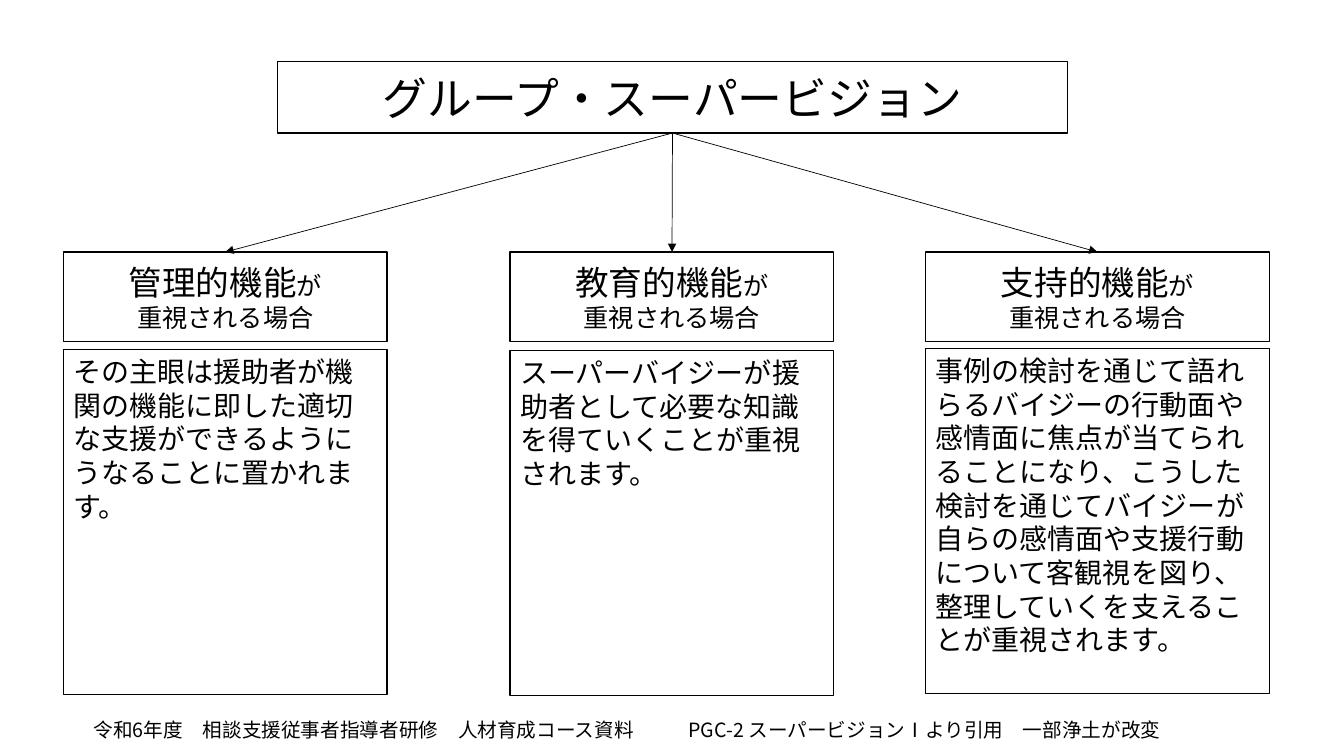
"""Build a slide on the three functions of group supervision."""
from dataclasses import dataclass

from lxml import etree
from pptx import Presentation
from pptx import util as u
from pptx.dml.color import RGBColor
from pptx.enum import shapes, text
from pptx.oxml.ns import qn


@dataclass(frozen=True)
class Theme:
    """Hold the colours, font, type sizes and line widths."""
    ink: RGBColor = RGBColor(0, 0, 0)
    paper: RGBColor = RGBColor(255, 255, 255)
    font: str = "Noto Sans CJK JP"
    title: int = 32
    function: int = 24
    body: int = 20
    case: int = 18
    source: int = 14
    border: float = 1
    arrow: float = 0.5


THEME = Theme()
COLUMNS, ROWS = 133.3, 75
CELL = u.Inches(0.1)
TITLE_BOX = (27.5, 6.1, 78.4, 7.1)
HEADING_TOP, HEADING_HEIGHT = 25, 8.9
BODY_HEIGHT = 34.2
SOURCE_BOX = (8.3, 70.7, 111.9, 3.4)
SOURCE_TAB = 59

FUNCTIONS = [
    (6.3, 32.1, 34.7, "管理的機能",
     "その主眼は援助者が機関の機能に即した適切な支援ができるようにうなることに置かれます。"),
    (50.6, 32.1, 34.8, "教育的機能",
     "スーパーバイジーが援助者として必要な知識を得ていくことが重視されます。"),
    (91.8, 34.1, 34.6, "支持的機能",
     "事例の検討を通じて語れらるバイジーの行動面や感情面に焦点が当てられることになり、"
     "こうした検討を通じてバイジーが自らの感情面や支援行動について客観視を図り、"
     "整理していくを支えることが重視されます。"),
]
SOURCE = ("令和6年度　相談支援従事者指導者研修　人材育成コース資料"
          "\tPGC-2 スーパービジョンⅠより引用　一部浄土が改変")


def grid(*cells):
    """Turn counts of grid cells into lengths."""
    return [u.Emu(round(count * CELL)) for count in cells]


def style_run(run, size):
    """Give a run the theme font, for Latin and Japanese, and its size."""
    run.font.size = u.Pt(size)
    run.font.name = THEME.font
    run.font.color.rgb = THEME.ink
    etree.SubElement(run.font._element, qn("a:ea"), typeface=THEME.font)


def write(frame, lines, align=text.PP_ALIGN.LEFT):
    """Write lines made of (wording, size) parts into a text frame."""
    frame.word_wrap = True
    frame.text = "\n".join("" for _ in lines)
    for paragraph, parts in zip(frame.paragraphs, lines):
        paragraph.alignment = align
        for wording, size in parts:
            run = paragraph.add_run()
            run.text = wording
            style_run(run, size)


def add_box(slide, place, lines, centred=True):
    """Add a white bordered box, centred or set from its top left."""
    box = slide.shapes.add_shape(shapes.MSO_SHAPE.RECTANGLE, *grid(*place))
    box.shadow.inherit = False
    box.fill.solid()
    box.fill.fore_color.rgb = THEME.paper
    box.line.color.rgb = THEME.ink
    box.line.width = u.Pt(THEME.border)
    anchor, align = ((text.MSO_ANCHOR.MIDDLE, text.PP_ALIGN.CENTER) if centred
                     else (text.MSO_ANCHOR.TOP, text.PP_ALIGN.LEFT))
    box.text_frame.vertical_anchor = anchor
    write(box.text_frame, lines, align)
    return box


def add_arrow(slide, title, heading):
    """Draw an arrow from below the title to the top of a heading."""
    arrow = slide.shapes.add_connector(
        shapes.MSO_CONNECTOR.STRAIGHT,
        title.left + title.width // 2, title.top + title.height,
        heading.left + heading.width // 2, heading.top)
    arrow.line.color.rgb = THEME.ink
    arrow.line.width = u.Pt(THEME.arrow)
    etree.SubElement(arrow.line._get_or_add_ln(), qn("a:tailEnd"), type="triangle")
    etree.SubElement(arrow._element.spPr, qn("a:effectLst"))


def add_function(slide, title, left, width, body_top, function, explanation):
    """Add one function: its heading, its explanation and its arrow."""
    heading = add_box(slide, (left, HEADING_TOP, width, HEADING_HEIGHT),
                      [[(function, THEME.function), ("が", THEME.case)],
                       [("重視される場合", THEME.case)]])
    add_box(slide, (left, body_top, width, BODY_HEIGHT),
            [[(explanation, THEME.body)]], centred=False)
    add_arrow(slide, title, heading)


def add_source(slide):
    """Add the source line, with a tab stop before the cited part."""
    frame = slide.shapes.add_textbox(*grid(*SOURCE_BOX)).text_frame
    write(frame, [[(SOURCE, THEME.source)]])
    tabs = etree.SubElement(frame.paragraphs[0]._p.get_or_add_pPr(), qn("a:tabLst"))
    etree.SubElement(tabs, qn("a:tab"), pos=str(grid(SOURCE_TAB)[0]), algn="l")


def main():
    """Build and save the slide."""
    deck = Presentation()
    deck.slide_width, deck.slide_height = grid(COLUMNS, ROWS)
    slide = deck.slides.add_slide(deck.slide_layouts[6])
    title = add_box(slide, TITLE_BOX, [[("グループ・スーパービジョン", THEME.title)]])
    for function in FUNCTIONS:
        add_function(slide, title, *function)
    add_source(slide)
    deck.save("out.pptx")


if __name__ == "__main__":
    main()
